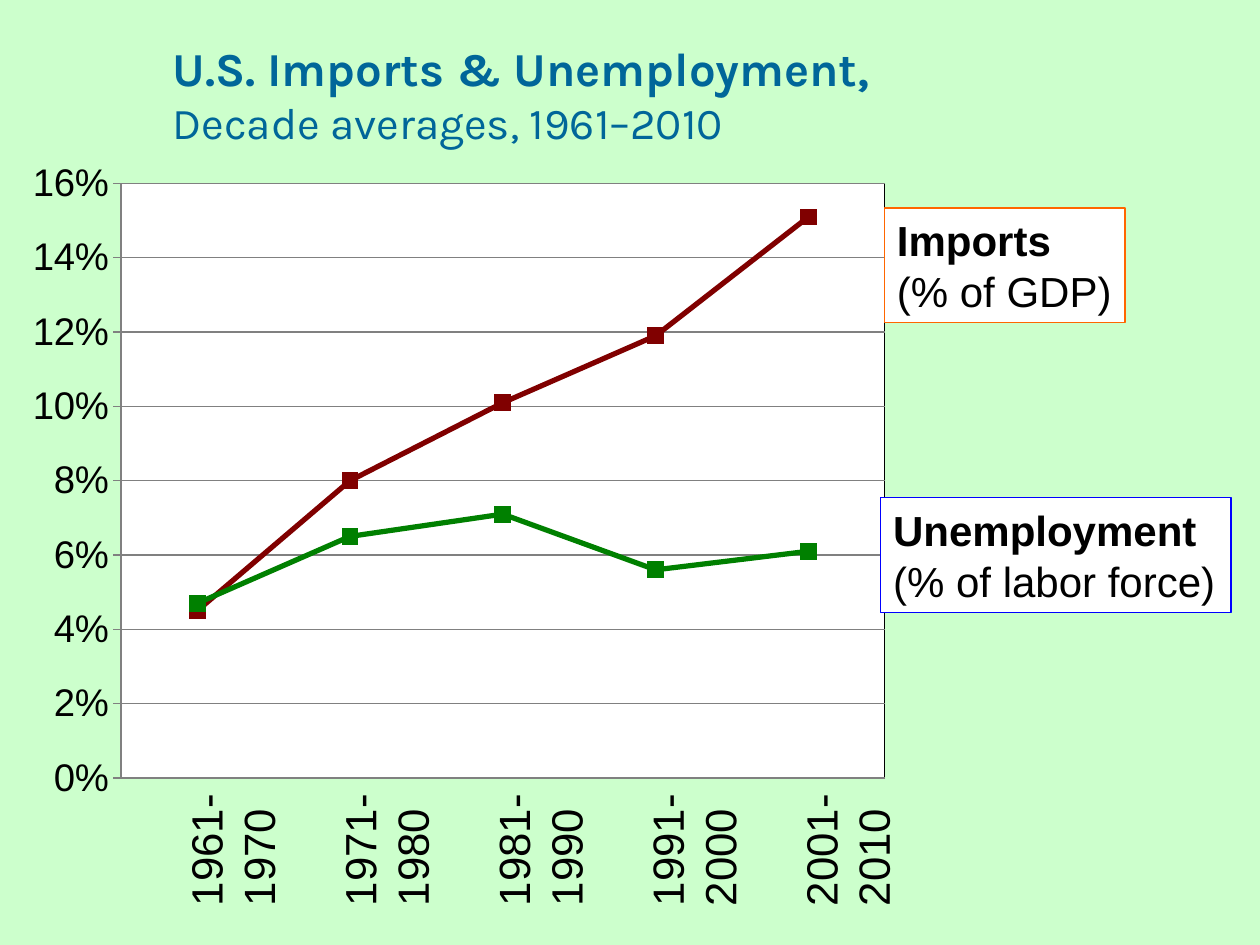
from lxml.etree import fromstring
from pptx import Presentation
from pptx.chart.data import CategoryChartData as Data
from pptx.dml.color import RGBColor as RGB
from pptx.enum.chart import XL_CHART_TYPE as Kind, XL_MARKER_STYLE as Mark, XL_TICK_MARK as Tick
from pptx.enum.shapes import MSO_SHAPE as Shape
from pptx.enum.text import MSO_ANCHOR as Anchor, PP_ALIGN as Align
from pptx.util import Inches, Pt

INK = {
    "back": "CCFFCC", "title": "006699", "text": "000000", "white": "FFFFFF",
    "grid": "808080", "imports": "800000", "jobless": "008000",
    "orange": "FF6600", "blue": "0000FF",
}
SPACE = ('xmlns:c="http://schemas.openxmlformats.org/drawingml/2006/chart" '
         'xmlns:a="http://schemas.openxmlformats.org/drawingml/2006/main"')
RATES = {
    "imports": (0.045, 0.08, 0.101, 0.119, 0.151),
    "jobless": (0.047, 0.065, 0.071, 0.056, 0.061),
}


def tint(name):
    return RGB.from_string(INK[name])


def paint(fill, name):
    fill.solid()
    fill.fore_color.rgb = tint(name)


def stroke(line, name, width):
    paint(line.fill, name)
    line.width = Pt(width)


def write(frame, lines, face="Arial", ink="text"):
    para = frame.paragraphs[0]
    para.alignment = Align.LEFT
    for row, (words, size, bold) in enumerate(lines):
        if row:
            para.add_line_break()
        run = para.add_run()
        run.text = words
        font = run.font
        font.name, font.size, font.bold = face, Pt(size), bold
        font.color.rgb = tint(ink)


def add_title(slide):
    box = slide.shapes.add_textbox(Inches(1.27), Inches(0.39), Inches(6.32), Inches(0.71))
    frame = box.text_frame
    frame.word_wrap = True
    frame.vertical_anchor = Anchor.MIDDLE
    write(frame, [("U.S. Imports & Unemployment,", 27, True),
                  ("Decade averages, 1961–2010", 25.2, False)], "Karla", "title")


def set_plot(chart, left, top, width, height):
    plot = chart._chartSpace.chart.plotArea
    for old in plot.findall("{*}layout"):
        plot.remove(old)
    sizes = "".join(f'<c:{tag} val="{val}"/>' for tag, val in
                    (("x", left), ("y", top), ("w", width), ("h", height)))
    plot.insert(0, fromstring(
        f'<c:layout {SPACE}><c:manualLayout><c:layoutTarget val="inner"/>'
        f'<c:xMode val="edge"/><c:yMode val="edge"/>{sizes}</c:manualLayout></c:layout>'))
    plot.append(fromstring(
        f'<c:spPr {SPACE}><a:solidFill><a:srgbClr val="{INK["white"]}"/></a:solidFill>'
        f'<a:ln w="9525"><a:solidFill><a:srgbClr val="{INK["text"]}"/></a:solidFill></a:ln></c:spPr>'))


def add_graph(slide):
    data = Data(number_format="0%")
    data.categories = ["1", "2", "3", "4", "5"]
    for name, vals in zip(("Series 1", "Series 2"), RATES.values()):
        data.add_series(name, vals)
    chart = slide.shapes.add_chart(Kind.LINE_MARKERS, Inches(0.26), Inches(1.29),
                                   Inches(7.2), Inches(5.12), data).chart
    chart.has_legend = chart.has_title = False
    chart.font.name, chart.font.size = "Arial", Pt(10)
    chart.font.color.rgb = tint("text")
    chart.category_axis.visible = False
    axis = chart.value_axis
    axis.minimum_scale, axis.maximum_scale, axis.major_unit = 0, 0.16, 0.02
    axis.major_tick_mark = Tick.CROSS
    axis.tick_labels.number_format = "0%"
    axis.tick_labels.number_format_is_linked = False
    font = axis.tick_labels.font
    font.name, font.size = "Arial", Pt(22)
    font.color.rgb = tint("text")
    axis.has_major_gridlines = True
    for part in (axis, axis.major_gridlines):
        stroke(part.format.line, "grid", 0.75)
    chart.plots[0].vary_by_categories = False
    for series, name in zip(chart.plots[0].series, RATES):
        series.smooth = False
        stroke(series.format.line, name, 3)
        mark = series.marker
        mark.style, mark.size = Mark.SQUARE, 9
        paint(mark.format.fill, name)
        stroke(mark.format.line, name, 0.75)
    set_plot(chart, 0.092, 0.031, 0.847, 0.923)


def add_decade(slide, left, year):
    box = slide.shapes.add_textbox(Inches(left), Inches(6.32), Inches(0.9), Inches(0.84))
    box.rotation = 270
    frame = box.text_frame
    frame.word_wrap = False
    frame.margin_left = frame.margin_right = frame.margin_top = frame.margin_bottom = 0
    write(frame, [(f"{year}-", 25, False), (f"{year + 9}", 25, False)])


def add_label(slide, left, top, width, edge, name, unit):
    box = slide.shapes.add_shape(Shape.RECTANGLE, Inches(left), Inches(top),
                                 Inches(width), Inches(0.91))
    box.shadow.inherit = False
    paint(box.fill, "white")
    stroke(box.line, edge, 0.75)
    frame = box.text_frame
    frame.word_wrap = True
    frame.vertical_anchor = Anchor.MIDDLE
    write(frame, [(name, 24, True), (unit, 24, False)])


def main():
    deck = Presentation()
    deck.slide_width, deck.slide_height = Inches(10), Inches(7.5)
    slide = deck.slides.add_slide(deck.slide_layouts[6])
    paint(slide.background.fill, "back")
    add_title(slide)
    add_graph(slide)
    for step in range(5):
        add_decade(slide, 1.39 + 1.22 * step, 1961 + 10 * step)
    add_label(slide, 7.02, 1.65, 1.91, "orange", "Imports", "(% of GDP)")
    add_label(slide, 6.99, 3.95, 2.78, "blue", "Unemployment", "(% of labor force)")
    deck.save("out.pptx")


if __name__ == "__main__":
    main()
